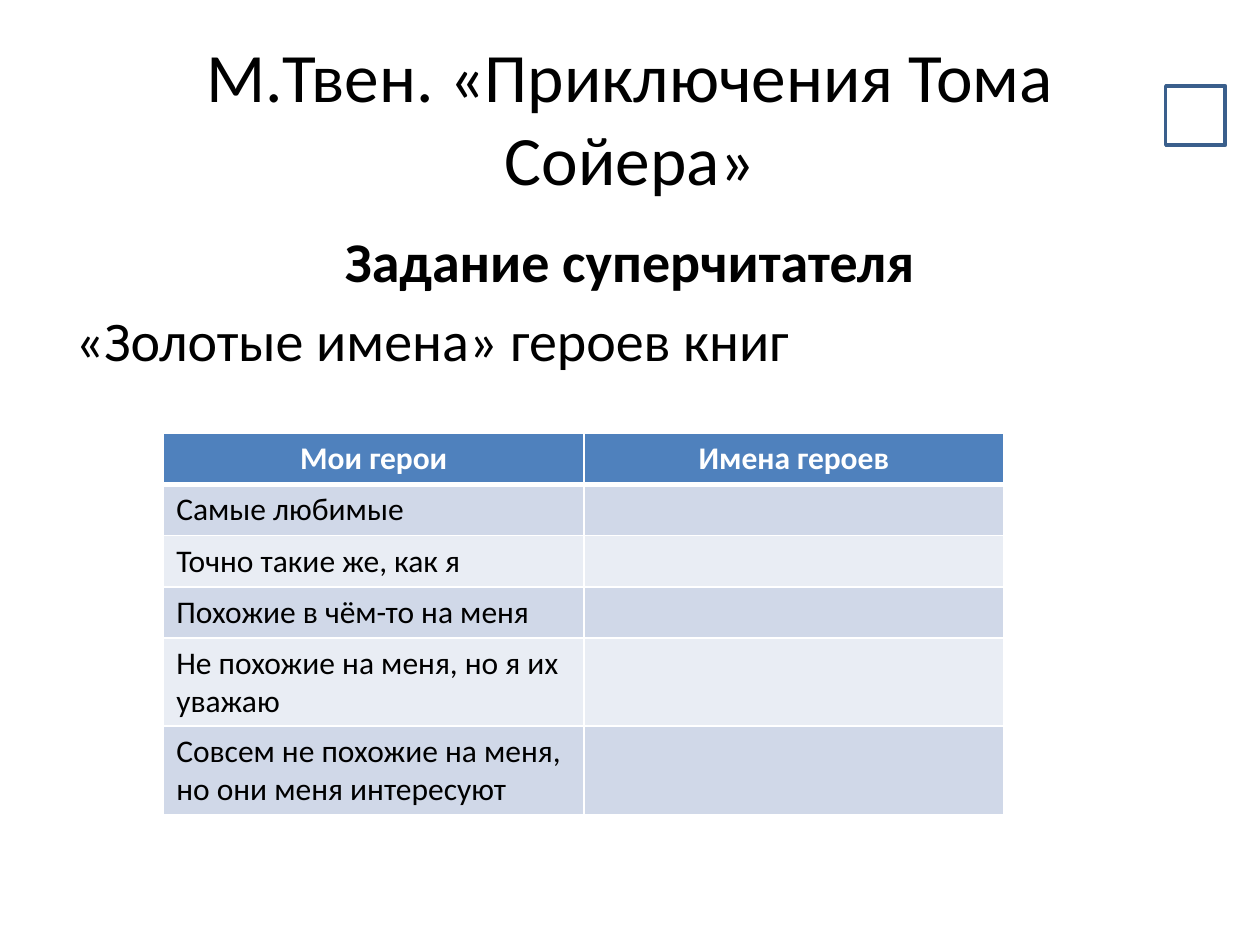
from lxml.etree import SubElement as Sub
from pptx import Presentation
from pptx.dml.color import RGBColor as Rgb
from pptx.enum.shapes import MSO_SHAPE as Kind
from pptx.enum.text import MSO_ANCHOR as Anchor, PP_ALIGN as Align
from pptx.oxml.ns import qn
from pptx.util import Cm, Pt

HUES = {
    "ink": "000000",
    "white": "FFFFFF",
    "head": "4F81BD",
    "odd": "D0D8E8",
    "even": "E9EDF4",
    "edge": "3A5F8C",
}


def write(para, text, size, hue="ink", bold=False, align=Align.LEFT):
    para.alignment = align
    run = para.add_run()
    run.text = text
    font = run.font
    font.name = "Calibri"
    font.size = Pt(size)
    font.bold = bold
    font.color.rgb = Rgb.from_string(HUES[hue])


def frame(cell, base):
    props = cell._tc.get_or_add_tcPr()
    for side, width in (("L", 1), ("R", 1), ("T", 1), ("B", base)):
        line = Sub(props, qn("a:ln" + side), w=str(Pt(width)))
        fill = Sub(line, qn("a:solidFill"))
        Sub(fill, qn("a:srgbClr"), val=HUES["white"])


deck = Presentation()
deck.slide_width, deck.slide_height = Cm(25.4), Cm(19.05)
slide = deck.slides.add_slide(deck.slide_layouts[6])
shapes = slide.shapes

title = shapes.add_textbox(Cm(1.27), Cm(0.76), Cm(22.86), Cm(3.18)).text_frame
title.word_wrap = True
title.vertical_anchor = Anchor.MIDDLE
title.margin_left = title.margin_right = Cm(0.5)
write(title.paragraphs[0], "М.Твен. «Приключения Тома Сойера»", 39.6, align=Align.CENTER)

body = shapes.add_textbox(Cm(1.27), Cm(4.45), Cm(22.86), Cm(12.57)).text_frame
body.word_wrap = True
task = body.paragraphs[0]
write(task, "Задание суперчитателя", 32, bold=True, align=Align.CENTER)
topic = body.add_paragraph()
write(topic, "«Золотые имена» героев книг", 32)
for para in (task, topic):
    para.space_before = Pt(6.4)
    props = para._p.get_or_add_pPr()
    props.set("marL", str(Cm(0.95)))
    props.set("indent", str(Cm(-0.95)))

rows = [
    ("Мои герои", "Имена героев"),
    ("Самые любимые", ""),
    ("Точно такие же, как я", ""),
    ("Похожие в чём-то на меня", ""),
    ("Не похожие на меня, но я их уважаю", ""),
    ("Совсем не похожие на меня, но они меня интересуют", ""),
]
grid = shapes.add_table(len(rows), 2, Cm(3.3), Cm(8.74), Cm(16.94), Cm(6.18)).table
for col in grid.columns:
    col.width = Cm(8.47)
for i, row in enumerate(rows):
    grid.rows[i].height = Cm(1.03)
    top = i == 0
    hue = "head" if top else "odd" if i % 2 else "even"
    for j, text in enumerate(row):
        cell = grid.cell(i, j)
        frame(cell, 3 if top else 1)
        cell.fill.solid()
        cell.fill.fore_color.rgb = Rgb.from_string(HUES[hue])
        para = cell.text_frame.paragraphs[0]
        if top:
            write(para, text, 18, "white", True, Align.CENTER)
        elif text:
            write(para, text, 18)

box = shapes.add_shape(Kind.RECTANGLE, Cm(23.5), Cm(1.73), Cm(1.2), Cm(1.2))
box.shadow.inherit = False
box.fill.background()
box.line.color.rgb = Rgb.from_string(HUES["edge"])
box.line.width = Pt(2)

deck.save("out.pptx")
